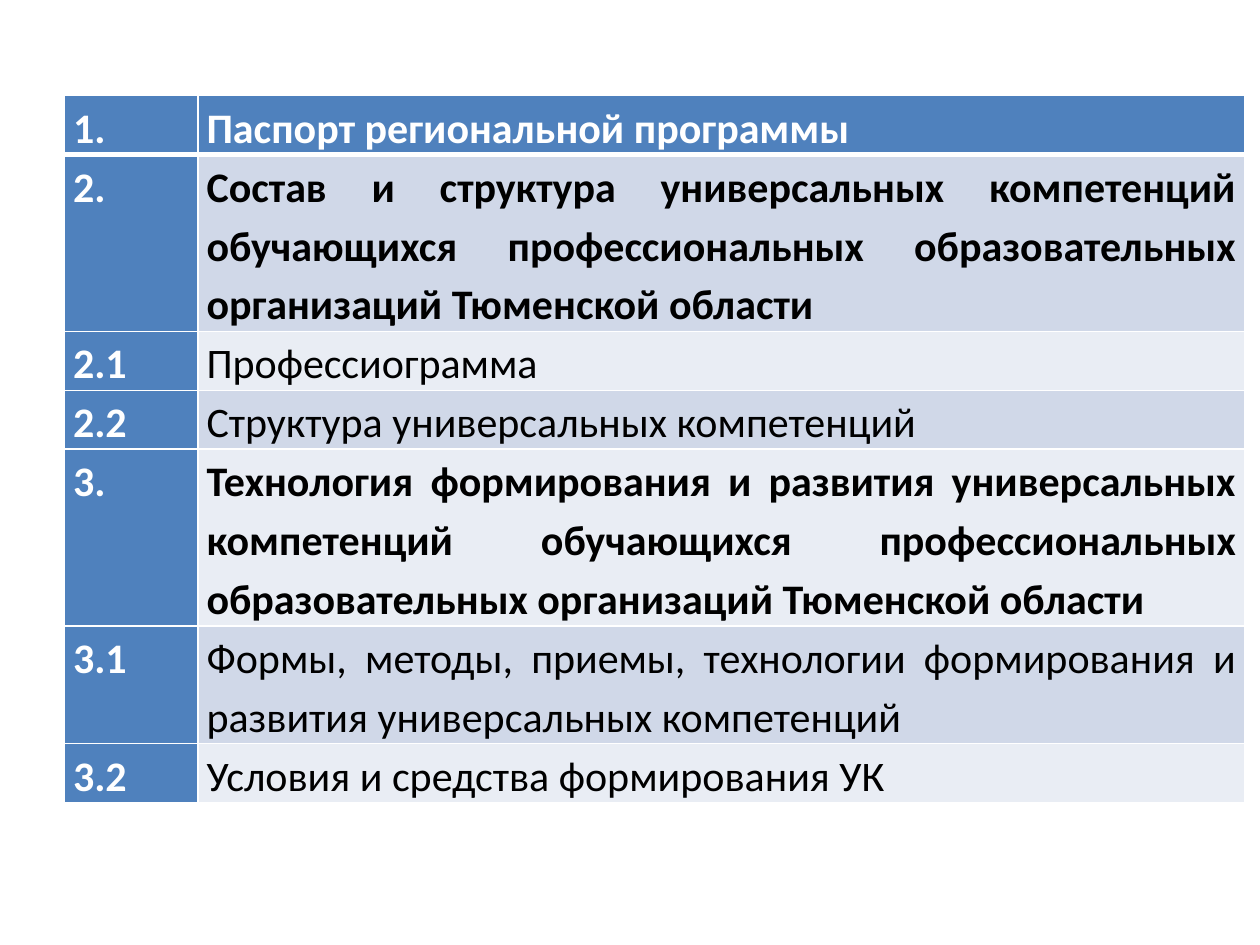
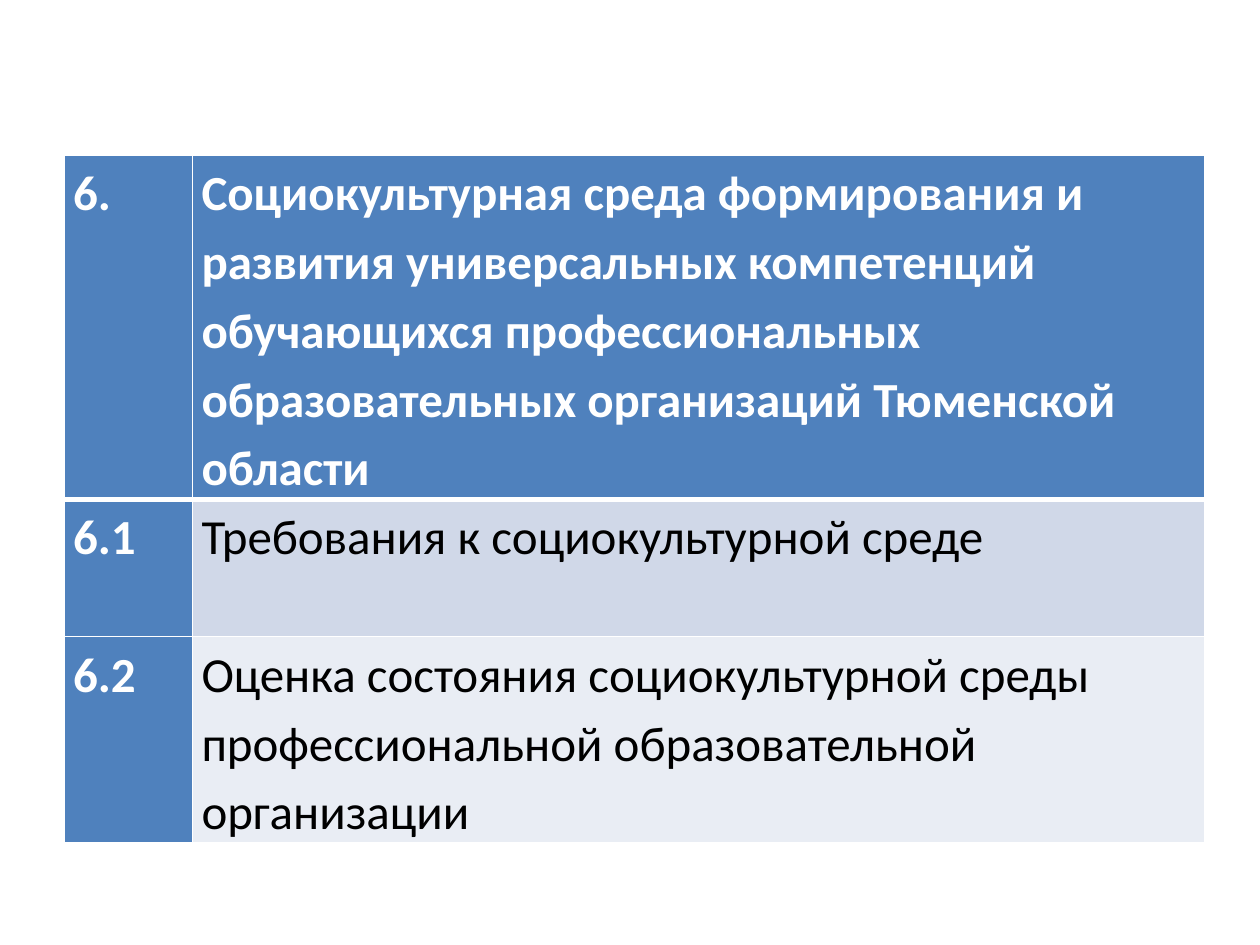
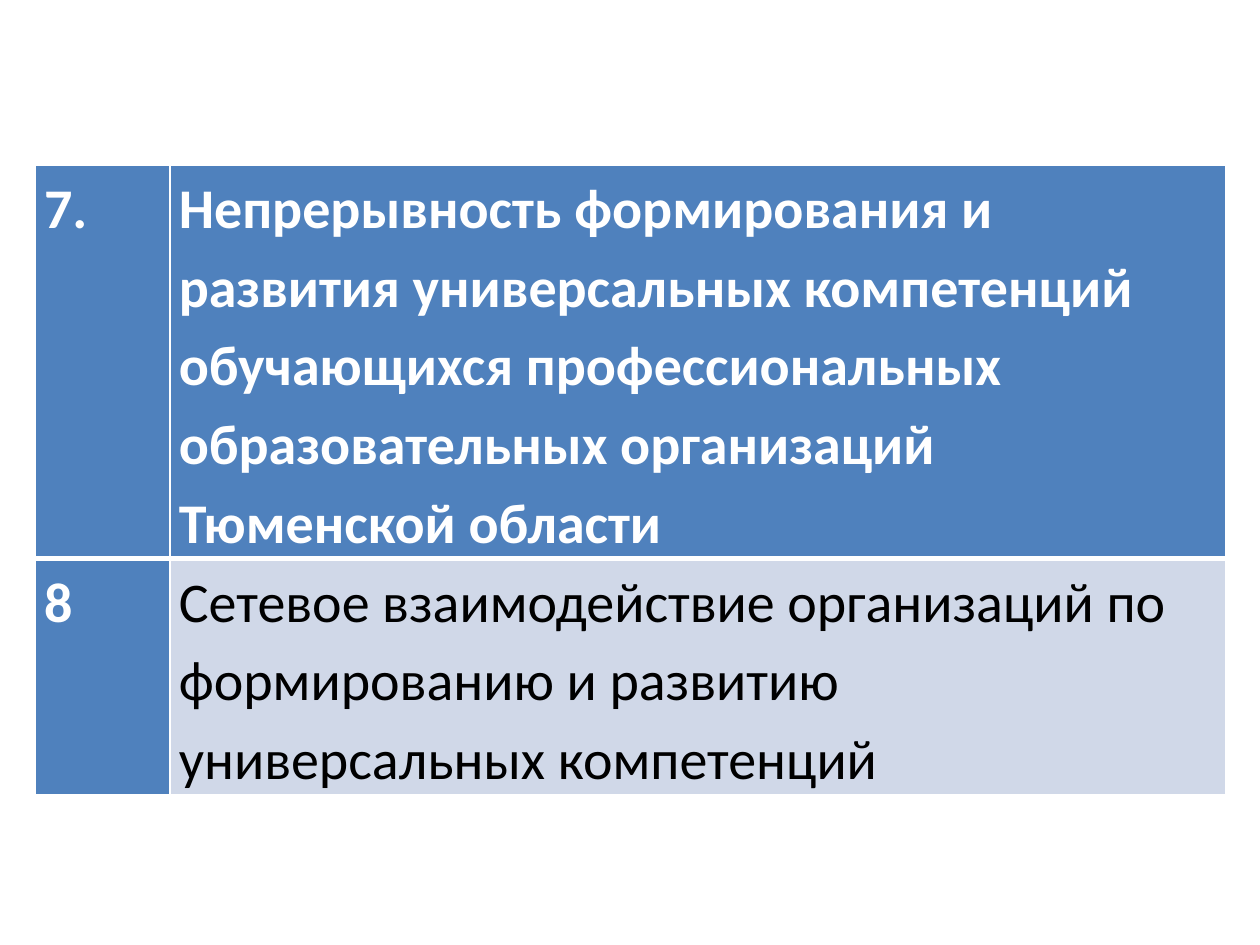
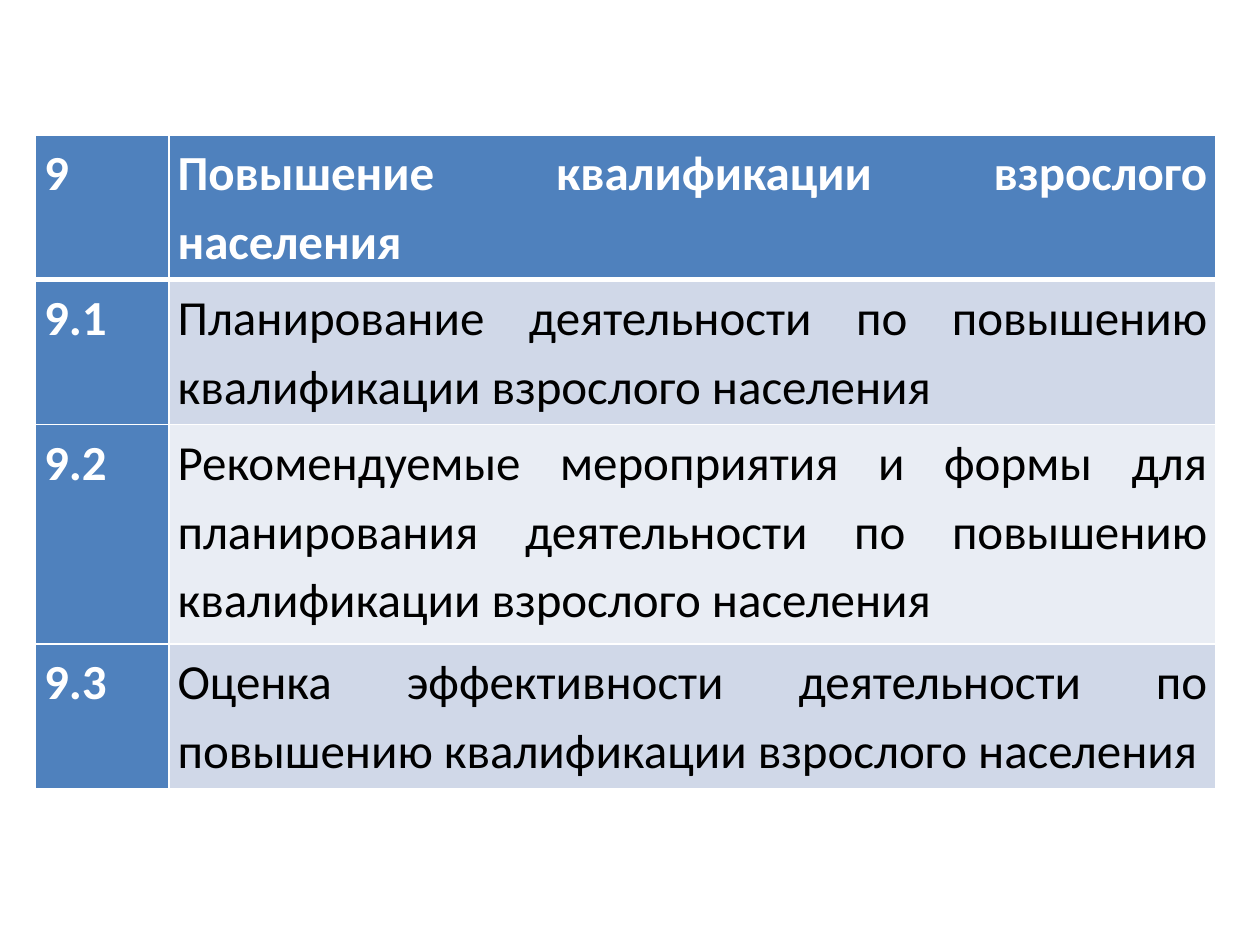
from dataclasses import dataclass

from pptx import Presentation
from pptx.dml.color import RGBColor
from pptx.enum.text import MSO_ANCHOR, PP_ALIGN
from pptx.oxml.ns import qn
from pptx.util import Inches, Pt
from lxml.etree import SubElement


@dataclass(frozen=True)
class Theme:
    accent: str = "4F81BD"
    bands: tuple = ("D0D8E8", "E9EDF4")
    light: str = "FFFFFF"
    dark: str = "000000"
    font: str = "Calibri"
    small: int = 24
    medium: int = 28
    large: int = 32
    line_spacing: float = 1.15
    thin: float = 1
    thick: float = 3


CELL_FORMAT = {
    "margin_left": Inches(0.07),
    "margin_right": Inches(0.07),
    "margin_top": 0,
    "margin_bottom": 0,
    "vertical_anchor": MSO_ANCHOR.TOP,
}


def apply_format(target, values):
    for attribute, value in values.items():
        setattr(target, attribute, value)


class ContentsDeck:
    def __init__(self, theme):
        self.theme = theme
        self.presentation = Presentation()
        self.presentation.slide_width = Inches(10)
        self.presentation.slide_height = Inches(7.5)
        self.slide = None

    def add_slide(self):
        blank_layout = self.presentation.slide_layouts[6]
        self.slide = self.presentation.slides.add_slide(blank_layout)

    def add_contents(self, left, top, widths, size, entries, align=PP_ALIGN.LEFT):
        """Draw entries of (number, heading, row height in inches)."""
        total_height = sum(height for _, _, height in entries)
        contents = self.slide.shapes.add_table(
            len(entries), len(widths), Inches(left), Inches(top),
            Inches(sum(widths)), Inches(total_height)).table
        for column, width in zip(contents.columns, widths):
            column.width = Inches(width)
        for row, (number, heading, height) in enumerate(entries):
            contents.rows[row].height = Inches(height)
            is_header = row == 0
            band = self.theme.accent if is_header else self.theme.bands[(row - 1) % 2]
            ink = self.theme.light if is_header else self.theme.dark
            is_section = is_header or number.endswith(".")
            number_cell, heading_cell = contents.cell(row, 0), contents.cell(row, 1)
            for cell in (number_cell, heading_cell):
                self.add_borders(cell, row)
            self.fill_cell(number_cell, number, self.theme.accent, self.theme.light,
                           size, True, PP_ALIGN.LEFT)
            self.fill_cell(heading_cell, heading, band, ink, size, is_section, align)

    def add_borders(self, cell, row):
        """Rule every side thinly, except the thick rule under the header."""
        header_side = {0: "lnB", 1: "lnT"}.get(row)
        properties = cell._tc.get_or_add_tcPr()
        for side in ("lnL", "lnR", "lnT", "lnB"):
            weight = self.theme.thick if side == header_side else self.theme.thin
            rule = SubElement(properties, qn(f"a:{side}"), w=str(Pt(weight)))
            rule_fill = SubElement(rule, qn("a:solidFill"))
            SubElement(rule_fill, qn("a:srgbClr"), val=self.theme.light)

    def fill_cell(self, cell, wording, background, ink, size, bold, align):
        apply_format(cell, CELL_FORMAT)
        cell.fill.solid()
        cell.fill.fore_color.rgb = RGBColor.from_string(background)
        paragraph = cell.text_frame.paragraphs[0]
        apply_format(paragraph, {"alignment": align,
                                 "line_spacing": self.theme.line_spacing})
        run = paragraph.add_run()
        run.text = wording
        apply_format(run.font, {"name": self.theme.font, "size": Pt(size), "bold": bold})
        run.font.color.rgb = RGBColor.from_string(ink)

    def save(self):
        self.presentation.save("out.pptx")


def main():
    theme = Theme()
    deck = ContentsDeck(theme)

    deck.add_slide()
    deck.add_contents(0.51, 0.76, (1.06, 8.31), theme.small, [
        ("1.", "Паспорт региональной программы", 0.46),
        ("2.", "Состав и структура универсальных компетенций обучающихся "
               "профессиональных образовательных организаций Тюменской области", 1.38),
        ("2.1", "Профессиограмма", 0.46),
        ("2.2", "Структура универсальных компетенций", 0.46),
        ("3.", "Технология формирования и развития универсальных компетенций обучающихся "
               "профессиональных образовательных организаций Тюменской области", 1.38),
        ("3.1", "Формы, методы, приемы, технологии формирования и развития "
                "универсальных компетенций", 0.92),
        ("3.2", "Условия и средства формирования УК", 0.46),
    ], PP_ALIGN.JUSTIFY)

    deck.add_slide()
    deck.add_contents(0.51, 1.23, (1.02, 8.03), theme.medium, [
        ("6.", "Социокультурная среда формирования и развития универсальных компетенций "
               "обучающихся профессиональных образовательных организаций "
               "Тюменской области", 2.69),
        ("6.1", "Требования к социокультурной среде", 1.09),
        ("6.2", "Оценка состояния социокультурной среды профессиональной "
                "образовательной организации", 1.61),
    ])

    deck.add_slide()
    deck.add_contents(0.28, 1.31, (1.07, 8.38), theme.large, [
        ("7.", "Непрерывность формирования и развития универсальных компетенций "
               "обучающихся профессиональных образовательных организаций "
               "Тюменской области", 3.07),
        ("8", "Сетевое взаимодействие организаций по формированию и развитию "
              "универсальных компетенций", 1.84),
    ])

    deck.add_slide()
    deck.add_contents(0.28, 1.07, (1.06, 8.31), theme.medium, [
        ("9", "Повышение квалификации взрослого населения", 1.15),
        ("9.1", "Планирование деятельности по повышению квалификации "
                "взрослого населения", 1.15),
        ("9.2", "Рекомендуемые мероприятия и формы для планирования деятельности "
                "по повышению квалификации взрослого населения", 1.74),
        ("9.3", "Оценка эффективности деятельности по повышению квалификации "
                "взрослого населения", 1.15),
    ], PP_ALIGN.JUSTIFY)

    deck.save()


if __name__ == "__main__":
    main()
